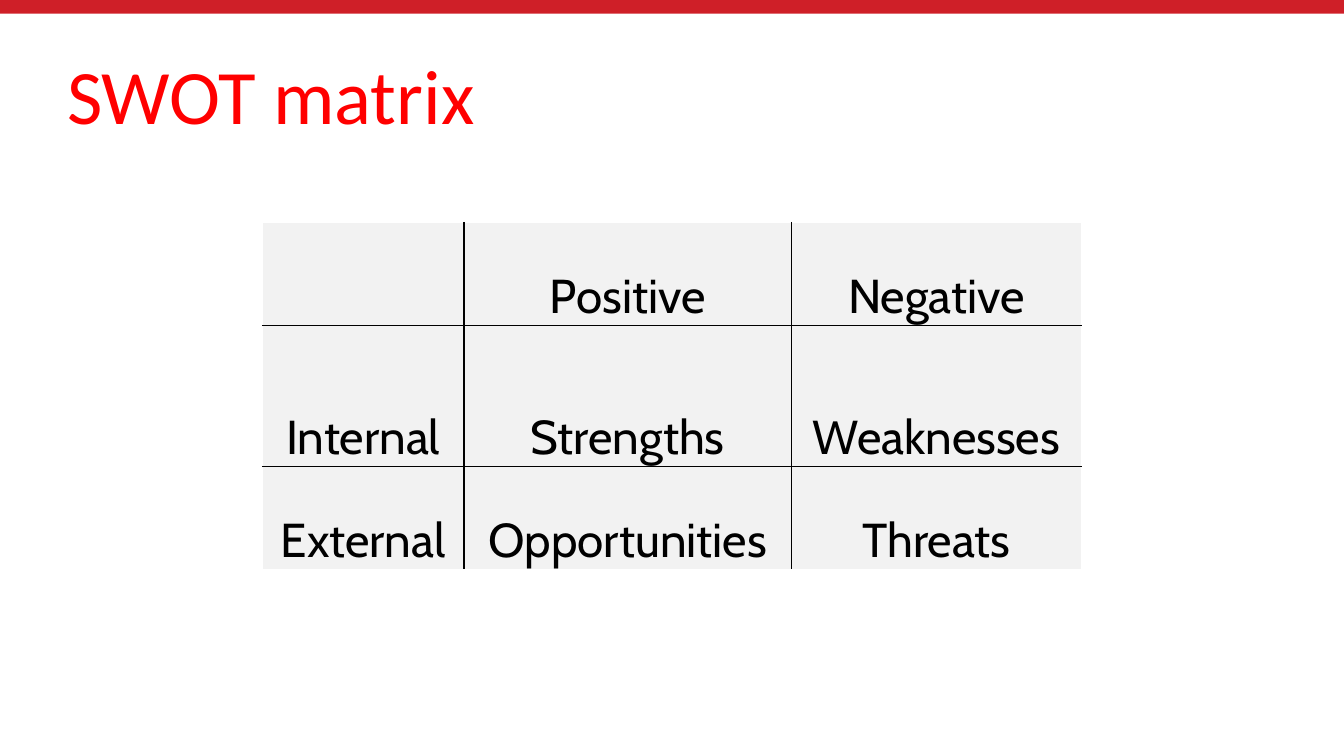
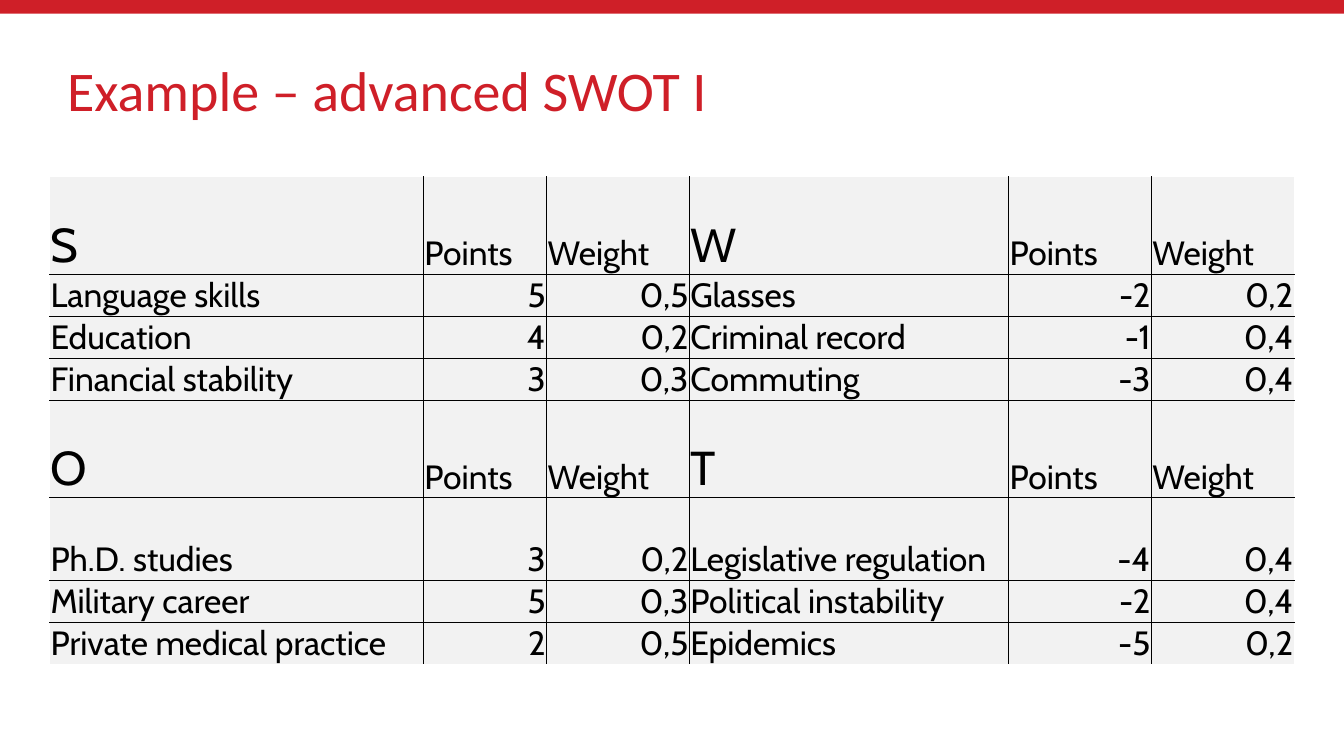
"""Build two SWOT slides: the basic matrix and a weighted example."""
from dataclasses import dataclass
from typing import Any

from lxml.etree import SubElement
from pptx import Presentation
from pptx.dml.color import RGBColor
from pptx.enum.shapes import MSO_SHAPE
from pptx.enum.text import MSO_ANCHOR, PP_ALIGN
from pptx.oxml.ns import qn
from pptx.util import Pt

COLOURS = {
    "band": "CF1F28",
    "bright": "FF0000",
    "paper": "FFFFFF",
    "cell": "F2F2F2",
    "ink": "000000",
}
PAGE_WIDTH, PAGE_HEIGHT = 960, 540
LARGE, SMALL = 34, 24
TITLE_FRAME = {
    "word_wrap": True, "vertical_anchor": MSO_ANCHOR.MIDDLE,
    "margin_left": 0, "margin_top": 0, "margin_right": 0, "margin_bottom": 0,
}
CELL_FRAME = {
    "vertical_anchor": MSO_ANCHOR.BOTTOM,
    "margin_left": Pt(0.7), "margin_top": Pt(0.7),
    "margin_right": Pt(0.7), "margin_bottom": 0,
}


@dataclass(frozen=True)
class Title:
    text: str
    size: float
    colour: str
    line_spacing: float


@dataclass(frozen=True)
class Grid:
    left: float
    top: float
    widths: tuple[float, ...]
    heights: tuple[float, ...]
    rows: tuple[tuple[str, ...], ...]
    centred: bool = False


@dataclass(frozen=True)
class Page:
    title: Title
    grid: Grid


HEADINGS = ("Points", "Weight")
PAGES = (
    Page(
        Title("SWOT matrix", 55, "bright", 1),
        Grid(187.4, 159, (144, 234, 207), (73.4, 100.8, 73.4), (
            ("", "Positive", "Negative"),
            ("Internal", "Strengths", "Weaknesses"),
            ("External", "Opportunities", "Threats"),
        ), centred=True),
    ),
    Page(
        Title("Example – advanced SWOT I", 40, "band", 0.9),
        Grid(35.5, 126.3, (267, 88, 102, 228, 102, 102),
             (69.6, 30, 30, 30, 69.6, 59, 30, 30), (
            ("S", *HEADINGS, "W", *HEADINGS),
            ("Language skills", "5", "0,5", "Glasses", "-2", "0,2"),
            ("Education", "4", "0,2", "Criminal record", "-1", "0,4"),
            ("Financial stability", "3", "0,3", "Commuting", "-3", "0,4"),
            ("O", *HEADINGS, "T", *HEADINGS),
            ("Ph.D. studies", "3", "0,2", "Legislative regulation", "-4", "0,4"),
            ("Military career", "5", "0,3", "Political instability", "-2", "0,4"),
            ("Private medical practice", "2", "0,5", "Epidemics", "-5", "0,2"),
        )),
    ),
)


def rgb(name: str) -> RGBColor:
    """Return the named colour."""
    return RGBColor.from_string(COLOURS[name])


def apply(target: Any, values: dict[str, Any]) -> None:
    """Set each format value on the target."""
    for name, value in values.items():
        setattr(target, name, value)


def write(para: Any, text: str, font: str, size: float, colour: str) -> None:
    """Add one formatted span to a paragraph."""
    span = para.add_run()
    span.text = text
    apply(span.font, {"name": font, "size": Pt(size)})
    span.font.color.rgb = rgb(colour)


def draw_band(slide: Any) -> None:
    """Draw the band along the top edge."""
    band = slide.shapes.add_shape(MSO_SHAPE.RECTANGLE, 0, 0, Pt(PAGE_WIDTH), Pt(9.8))
    band.shadow.inherit = False
    band.fill.solid()
    band.fill.fore_color.rgb = rgb("band")
    band.line.fill.background()


def draw_title(slide: Any, title: Title) -> None:
    """Draw the slide title."""
    box = slide.shapes.add_textbox(Pt(48), Pt(21.6), Pt(864), Pt(90))
    apply(box.text_frame, TITLE_FRAME)
    para = box.text_frame.paragraphs[0]
    para.line_spacing = title.line_spacing
    write(para, title.text, "Calibri", title.size, title.colour)


def draw_border(cell: Any, side: str, colour: str) -> None:
    """Add a one-point border to one side of a cell."""
    properties = cell._tc.get_or_add_tcPr()
    line = SubElement(properties, qn(f"a:ln{side}"), w=str(Pt(1)))
    fill = SubElement(line, qn("a:solidFill"))
    SubElement(fill, qn("a:srgbClr"), val=COLOURS[colour])


def text_style(text: str, centred: bool) -> tuple[PP_ALIGN, int]:
    """Choose the alignment and size that suit a cell's text."""
    if centred:
        return PP_ALIGN.CENTER, LARGE
    if text[-1:].isdigit():
        return PP_ALIGN.RIGHT, SMALL
    return PP_ALIGN.LEFT, LARGE if len(text) == 1 else SMALL


def draw_grid(slide: Any, grid: Grid) -> None:
    """Draw a table with black inner lines and white outer edges."""
    row_count, column_count = len(grid.heights), len(grid.widths)
    table = slide.shapes.add_table(
        row_count, column_count, Pt(grid.left), Pt(grid.top),
        Pt(sum(grid.widths)), Pt(sum(grid.heights))).table
    apply(table, {"first_row": False, "horz_banding": False})
    for column, width in zip(table.columns, grid.widths):
        column.width = Pt(width)
    for row, height in zip(table.rows, grid.heights):
        row.height = Pt(height)
    for row_index, texts in enumerate(grid.rows):
        for column_index, text in enumerate(texts):
            cell = table.cell(row_index, column_index)
            apply(cell, CELL_FRAME)
            outer_edges = {
                "L": column_index == 0,
                "R": column_index == column_count - 1,
                "T": row_index == 0,
                "B": row_index == row_count - 1,
            }
            for side, is_outer in outer_edges.items():
                draw_border(cell, side, "paper" if is_outer else "ink")
            cell.fill.solid()
            cell.fill.fore_color.rgb = rgb("cell")
            if text:
                para = cell.text_frame.paragraphs[0]
                para.alignment, size = text_style(text, grid.centred)
                write(para, text, "Cabin", size, "ink")


def main() -> None:
    """Build and save the deck."""
    deck = Presentation()
    apply(deck, {"slide_width": Pt(PAGE_WIDTH), "slide_height": Pt(PAGE_HEIGHT)})
    for page in PAGES:
        slide = deck.slides.add_slide(deck.slide_layouts[6])
        draw_band(slide)
        draw_title(slide, page.title)
        draw_grid(slide, page.grid)
    deck.save("out.pptx")


if __name__ == "__main__":
    main()
